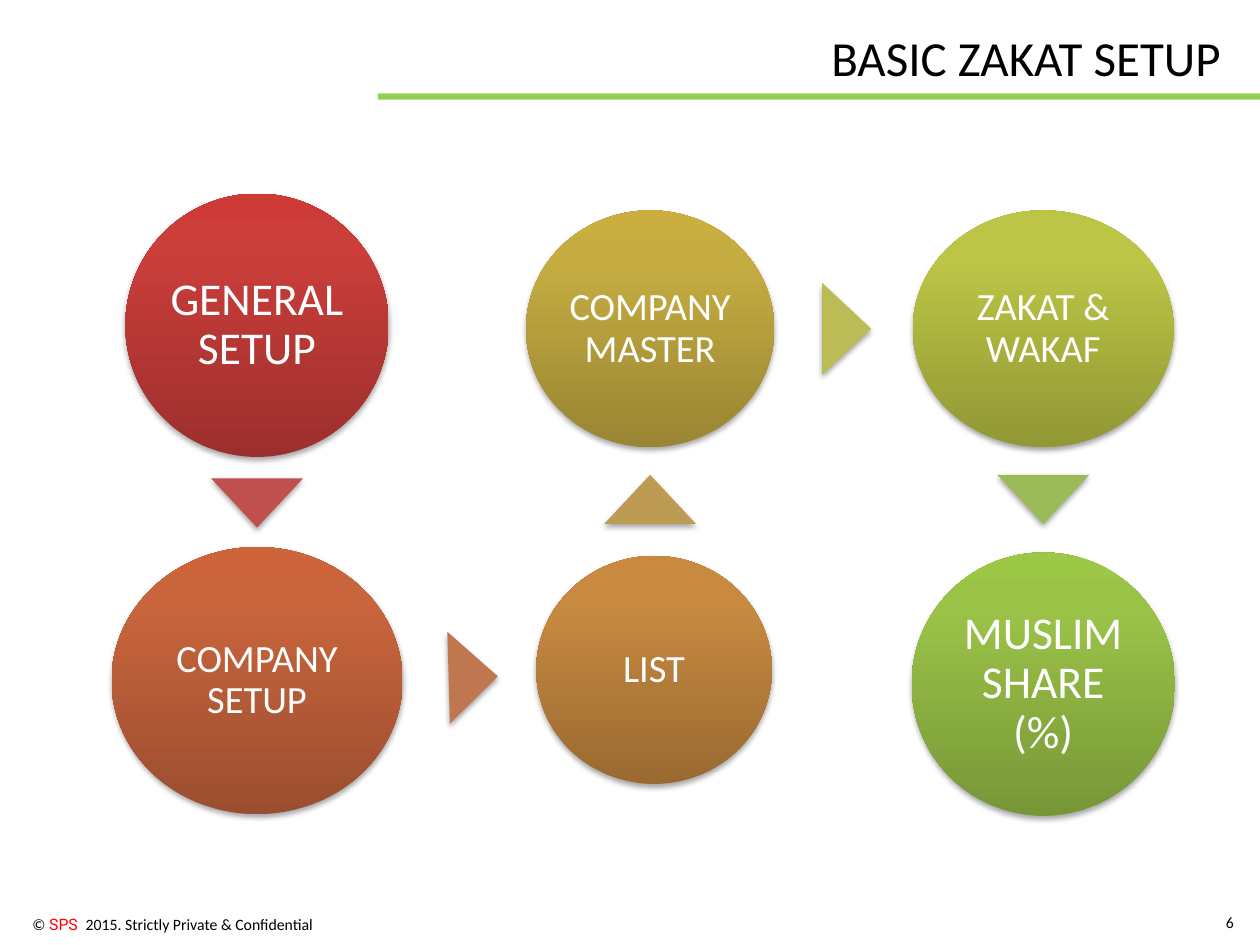
from dataclasses import dataclass

import lxml.etree
import pptx
import pptx.dml.color
import pptx.enum.shapes
import pptx.enum.text
import pptx.oxml
import pptx.oxml.ns
import pptx.util

RGBColor = pptx.dml.color.RGBColor
MSO_SHAPE = pptx.enum.shapes.MSO_SHAPE
PP_ALIGN = pptx.enum.text.PP_ALIGN
MSO_ANCHOR = pptx.enum.text.MSO_ANCHOR
Inches = pptx.util.Inches
Pt = pptx.util.Pt

BLACK = RGBColor(0x00, 0x00, 0x00)
WHITE = RGBColor(0xFF, 0xFF, 0xFF)
RED = RGBColor(0xFF, 0x00, 0x00)
GREEN = RGBColor(0x92, 0xD0, 0x50)
NAMESPACE = pptx.oxml.ns.nsdecls("a")

# Flow grid: centre of the first cell and the pitch, in inches
FIRST_X, FIRST_Y = 2.04, 2.61
COLUMN_PITCH, ROW_PITCH = 3.12, 2.82
ARROW_WIDTH, ARROW_HEIGHT = 0.73, 0.39


@dataclass
class Step:
    text: str
    column: float
    row: float
    width: float
    height: float
    size: int
    shades: tuple[RGBColor, RGBColor, RGBColor]  # bottom, 80 %, top


@dataclass
class Arrow:
    column: float
    row: float
    rotation: float
    color: RGBColor


@dataclass
class Span:
    text: str
    color: RGBColor = BLACK
    font: str = "Calibri"


def shades(*codes: str) -> tuple[RGBColor, ...]:
    return tuple(RGBColor.from_string(code) for code in codes)


STEPS = [
    Step("GENERAL SETUP", 0, -0.01, 2.09, 2.09, 26, shades("9C2F2D", "CB3E3A", "CE3B37")),
    Step("COMPANY SETUP", 0, 0.99, 2.31, 2.12, 22, shades("9B4E2F", "C9653D", "CD643A")),
    Step("LIST", 1.01, 0.96, 1.87, 1.81, 22, shades("9A6A31", "C88A40", "CB8B3D")),
    Step("COMPANY MASTER", 1, 0, 1.97, 1.88, 22, shades("998533", "C6AD42", "CAAF40")),
    Step("ZAKAT & WAKAF", 2, 0, 2.07, 1.88, 22, shades("919835", "BCC545", "BFC843")),
    Step("MUSLIM SHARE (%)", 2, 1, 2.09, 2.09, 26, shades("779737", "9BC348", "9DC746")),
]
ARROWS = [
    Arrow(0, 0.49, 180, RGBColor(0xC0, 0x50, 0x4D)),
    Arrow(0.55, 0.98, 88.4, RGBColor(0xBF, 0x77, 0x50)),
    Arrow(1, 0.48, 0, RGBColor(0xBD, 0x9B, 0x53)),
    Arrow(1.5, 0, 90, RGBColor(0xBC, 0xBC, 0x56)),
    Arrow(2, 0.48, 180, RGBColor(0x9B, 0xBB, 0x59)),
]


def add_flow_shape(page, kind, column: float, row: float, width: float, height: float):
    """Place a borderless shape with a soft shadow, centred on a grid point."""
    left = FIRST_X + column * COLUMN_PITCH - width / 2
    top = FIRST_Y + row * ROW_PITCH - height / 2
    shape = page.shapes.add_shape(kind, Inches(left), Inches(top), Inches(width), Inches(height))
    shape.line.fill.background()
    shape.shadow.inherit = False
    effects = shape._element.spPr.find(pptx.oxml.ns.qn("a:effectLst"))
    effects.append(pptx.oxml.parse_xml(
        f'<a:outerShdw {NAMESPACE} blurRad="40000" dist="23000" dir="5400000" rotWithShape="0">'
        '<a:srgbClr val="000000"><a:alpha val="35000"/></a:srgbClr></a:outerShdw>'))
    return shape


def add_step(page, step: Step) -> None:
    circle = add_flow_shape(page, MSO_SHAPE.OVAL, step.column, step.row, step.width, step.height)
    stops = "".join(
        f'<a:gs pos="{share * 1000}"><a:srgbClr val="{color}"/></a:gs>'
        for share, color in zip((0, 80, 100), step.shades))
    gradient = pptx.oxml.parse_xml(
        f'<a:gradFill {NAMESPACE} rotWithShape="1"><a:gsLst>{stops}</a:gsLst>'
        '<a:lin ang="16200000" scaled="0"/></a:gradFill>')
    circle._element.spPr.find(pptx.oxml.ns.qn("a:prstGeom")).addnext(gradient)

    frame = circle.text_frame
    frame.word_wrap = True
    frame.vertical_anchor = MSO_ANCHOR.MIDDLE
    frame.margin_left = frame.margin_right = Inches(0.03)
    frame.margin_top = frame.margin_bottom = Inches(0.03)
    para = frame.paragraphs[0]
    para.text = step.text
    para.alignment = PP_ALIGN.CENTER
    para.line_spacing = 0.9
    para.font.name = "Calibri"
    para.font.size = Pt(step.size)
    para.font.color.rgb = WHITE


def add_arrow(page, arrow: Arrow) -> None:
    triangle = add_flow_shape(page, MSO_SHAPE.ISOSCELES_TRIANGLE, arrow.column, arrow.row,
                              ARROW_WIDTH, ARROW_HEIGHT)
    triangle.rotation = arrow.rotation
    triangle.fill.solid()
    triangle.fill.fore_color.rgb = arrow.color


def add_text(page, place: tuple[float, ...], spans: list[Span], size: int,
             align=PP_ALIGN.RIGHT, anchor=MSO_ANCHOR.TOP, wrap: bool = True) -> None:
    box = page.shapes.add_textbox(*(Inches(length) for length in place))
    frame = box.text_frame
    frame.word_wrap = wrap
    frame.vertical_anchor = anchor
    para = frame.paragraphs[0]
    para.alignment = align
    para.font.size = Pt(size)
    for span in spans:
        run = para.add_run()
        run.text = span.text
        run.font.name = span.font
        run.font.color.rgb = span.color


def main() -> None:
    deck = pptx.Presentation()
    deck.slide_width, deck.slide_height = Inches(10), Inches(7.5)
    page = deck.slides.add_slide(deck.slide_layouts[6])

    # Rule under the title
    rule = page.shapes.add_shape(MSO_SHAPE.RECTANGLE, Inches(3), Inches(0.74),
                                 Inches(7), Inches(0.05))
    rule.fill.solid()
    rule.fill.fore_color.rgb = GREEN
    rule.line.fill.background()
    rule.shadow.inherit = False

    # Footer and page number
    add_text(page, (-0.33, 7.21, 2.91, 0.25),
             [Span("© "), Span("SPS  ", RED, "Roboto"),
              Span("2015. Strictly Private & Confidential")], 9)
    add_text(page, (9.49, 7.12, 0.4, 0.4), [Span("6")], 9, anchor=MSO_ANCHOR.MIDDLE)

    # Flow of setup steps
    for step in STEPS:
        add_step(page, step)
    for arrow in ARROWS:
        add_arrow(page, arrow)

    # Title
    add_text(page, (6.5, 0.17, 3.33, 0.57), [Span("BASIC ZAKAT SETUP")], 28,
             align=PP_ALIGN.LEFT, wrap=False)

    deck.save("out.pptx")


if __name__ == "__main__":
    main()
